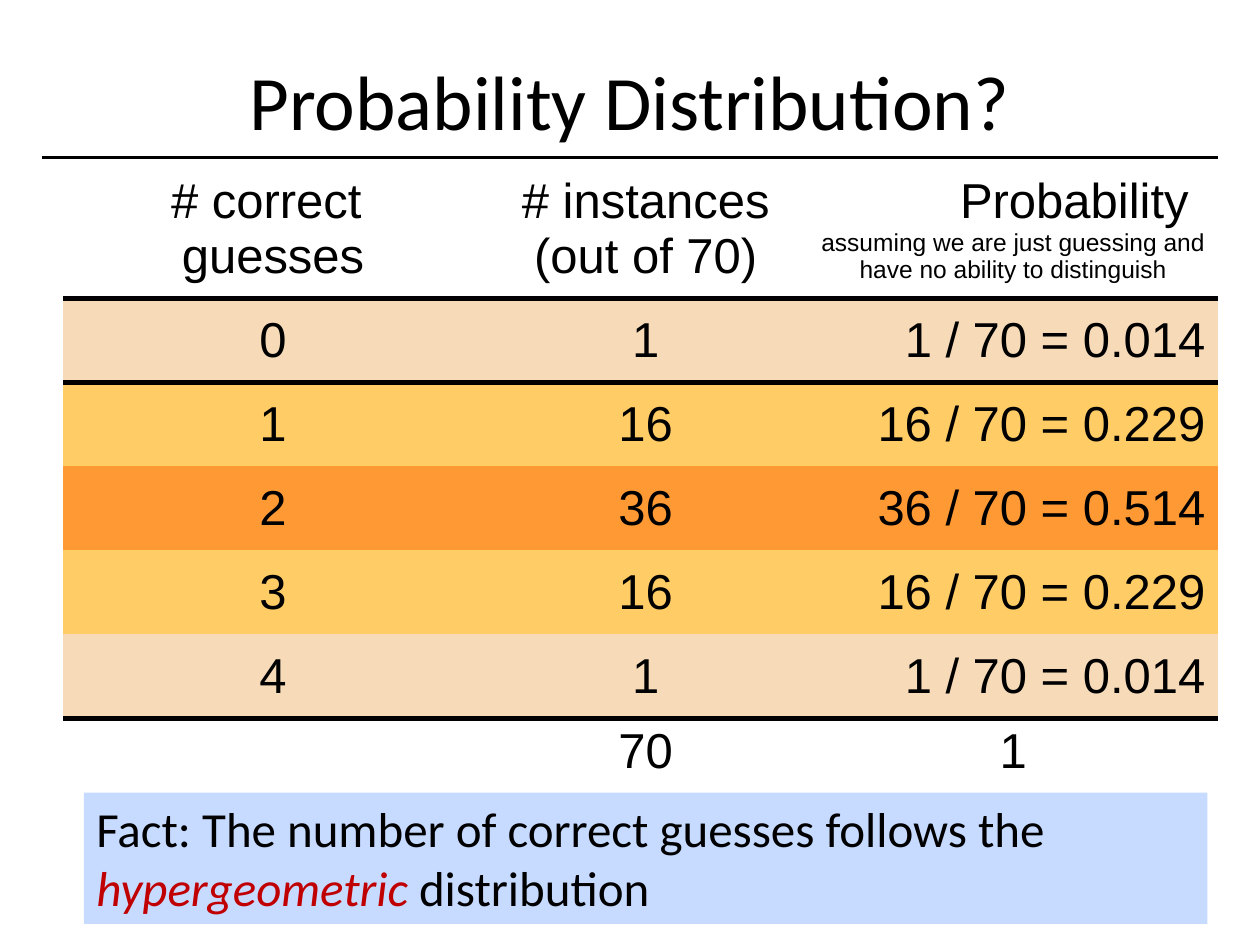
from lxml.etree import SubElement
from pptx import Presentation
from pptx.dml.color import RGBColor
from pptx.enum.shapes import MSO_CONNECTOR as Connector, MSO_SHAPE as Shape
from pptx.enum.text import MSO_ANCHOR as Anchor, PP_ALIGN as Align
from pptx.oxml.ns import qn
from pptx.util import Inches, Pt

COLORS = {
    "ink": "000000", "accent": "C00000", "note": "6699FF",
    "rare": "F7DBB9", "likely": "FFCC66", "peak": "FF9933",
}
PLAIN_TABLE = "{2D5ABB26-0587-4C30-8999-92F81FD0307C}"


class Deck:
    """Style and current slide; lengths are cells of a 60 x 45 grid."""

    heading_font, table_font = "Calibri", "Arial"
    title_size, body_size, small_size = 44, 28, 14

    def __init__(self):
        self.file = Presentation()
        self.file.slide_width, self.file.slide_height = Inches(10), Inches(7.5)
        self.unit = self.file.slide_width / 60
        self.slide = self.file.slides.add_slide(self.file.slide_layouts[6])

    def grid(self, *cells):
        return [round(cell * self.unit) for cell in cells]

    def run(self, paragraph, text, size, font, color="ink", italic=False):
        run = paragraph.add_run()
        run.text = text
        run.font.size, run.font.name, run.font.italic = Pt(size), font, italic
        run.font.color.rgb = RGBColor.from_string(COLORS[color])

    def title(self, text, *box):
        frame = self.slide.shapes.add_textbox(*self.grid(*box)).text_frame
        frame.word_wrap, frame.vertical_anchor = True, Anchor.MIDDLE
        paragraph = frame.paragraphs[0]
        paragraph.alignment = Align.CENTER
        self.run(paragraph, text, self.title_size, self.heading_font)

    def rule(self, *ends):
        rule = self.slide.shapes.add_connector(Connector.STRAIGHT, *self.grid(*ends))
        rule.line.color.rgb = RGBColor.from_string(COLORS["ink"])
        rule.line.width = Pt(2)
        SubElement(rule._element.spPr, qn("a:effectLst"))

    def note(self, pieces, *box, opacity):
        note = self.slide.shapes.add_shape(Shape.RECTANGLE, *self.grid(*box))
        note.shadow.inherit = False
        note.line.fill.background()
        note.fill.solid()
        note.fill.fore_color.rgb = RGBColor.from_string(COLORS["note"])
        tint = note.fill._xPr.find(qn("a:solidFill"))[0]
        SubElement(tint, qn("a:alpha"), val=str(opacity * 1000))
        frame = note.text_frame
        frame.word_wrap, frame.vertical_anchor = True, Anchor.TOP
        paragraph = frame.paragraphs[0]
        paragraph.alignment = Align.LEFT
        for text, color, italic in pieces:
            self.run(paragraph, text, self.body_size, self.heading_font, color, italic)

    def table(self, left, top, widths, heights):
        frame = self.slide.shapes.add_table(
            len(heights), len(widths), *self.grid(left, top, sum(widths), sum(heights)))
        table = frame.table
        table.first_row = table.horz_banding = False
        table._tbl.tblPr.find(qn("a:tableStyleId")).text = PLAIN_TABLE
        for column, width in zip(table.columns, self.grid(*widths)):
            column.width = width
        for row, height in zip(table.rows, self.grid(*heights)):
            row.height = height
        return table

    def border(self, cell, side):
        line = SubElement(cell._tc.get_or_add_tcPr(), qn(f"a:{side}"), w=str(Pt(3)))
        fill = SubElement(line, qn("a:solidFill"))
        SubElement(fill, qn("a:srgbClr"), val=COLORS["ink"])

    def cell(self, cell, lines, align=Align.CENTER, fill=None, sides=()):
        """Fill one cell; borders go first, as the schema orders them."""
        for side in sides:
            self.border(cell, side)
        if fill:
            cell.fill.solid()
            cell.fill.fore_color.rgb = RGBColor.from_string(COLORS[fill])
            cell.vertical_anchor = Anchor.MIDDLE
        else:
            cell.fill.background()
        paragraph = cell.text_frame.paragraphs[0]
        paragraph.alignment = align
        for number, line in enumerate(lines):
            if number:
                paragraph.add_line_break()
            self.run(paragraph, line, self.body_size, self.table_font)
        return paragraph


def main():
    deck = Deck()
    deck.title("Probability Distribution?", 3, 1, 54, 7.5)

    instances = [1, 16, 36, 16, 1]
    total = sum(instances)
    fills = ["rare", "likely", "peak", "likely", "rare"]
    table = deck.table(3, 8, [20, 15.5, 19.5], [6] + [4] * 6)

    headings = [["# correct ", "guesses"], [f"# instances (out of {total})"], ["Probability "]]
    for column, lines in enumerate(headings):
        heading = deck.cell(table.cell(0, column), lines, sides=["lnB"])
    heading._p.get_or_add_pPr().set("indent", str(Inches(0.97)))
    deck.run(heading, "assuming we are just guessing and have no ability to distinguish",
             deck.small_size, deck.table_font)

    last = len(instances) - 1
    for guesses, (count, fill) in enumerate(zip(instances, fills)):
        sides = {0: ["lnT"], last: ["lnB"]}.get(guesses, [])
        chance = f"{count} / {total} = {count / total:.3f}"
        for column, text in enumerate([str(guesses), str(count), chance]):
            align = Align.RIGHT if column == 2 else Align.CENTER
            deck.cell(table.cell(guesses + 1, column), [text], align, fill, sides)

    for column, lines in enumerate([[], [str(total)], ["1"]]):
        deck.cell(table.cell(last + 2, column), lines, sides=["lnT"])

    deck.note([("Fact: The number of correct guesses follows the ", "ink", False),
               ("hypergeometric ", "accent", True),
               ("distribution", "ink", False)], 4, 37.75, 53.5, 6.25, opacity=36)
    deck.rule(2, 7.5, 58, 7.5)
    deck.file.save("out.pptx")


if __name__ == "__main__":
    main()
